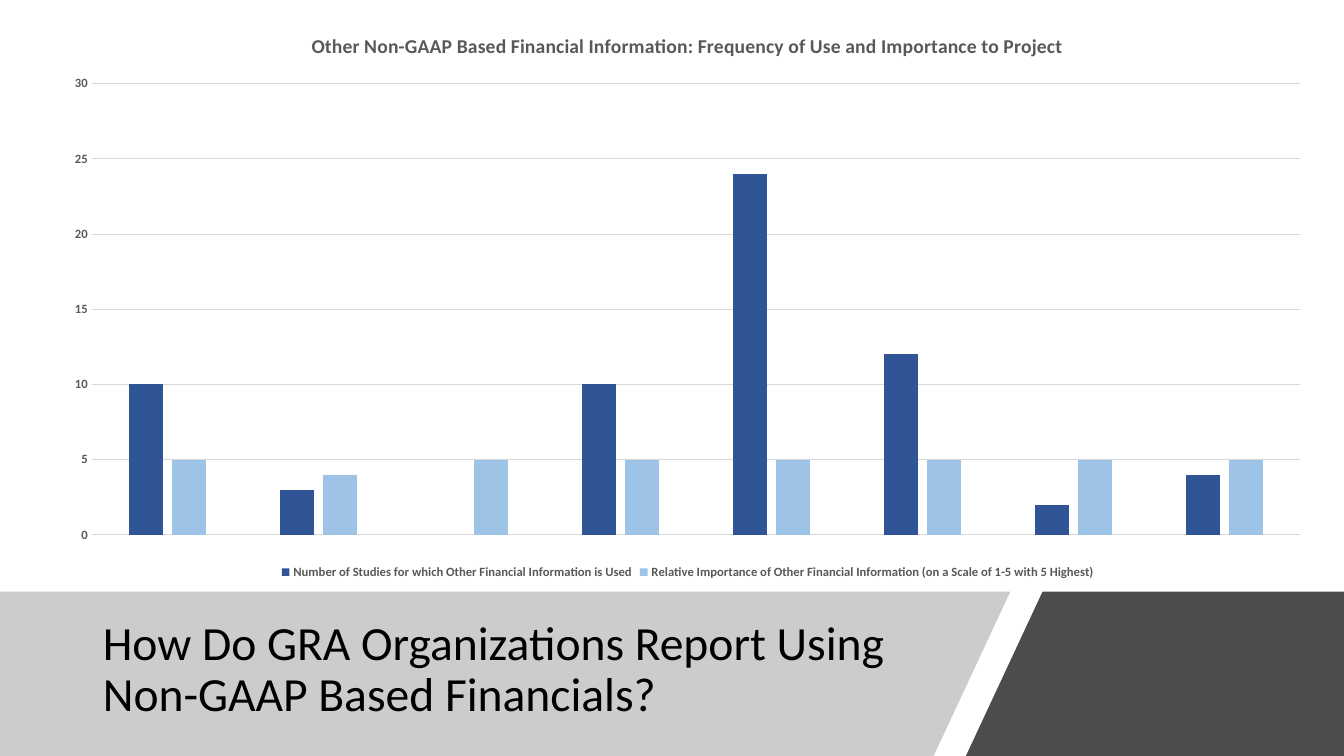
from dataclasses import dataclass

from lxml import etree
from pptx import Presentation
from pptx.chart.data import CategoryChartData
from pptx.dml.color import RGBColor
from pptx.enum.chart import XL_CHART_TYPE, XL_LEGEND_POSITION, XL_TICK_MARK
from pptx.enum.text import MSO_ANCHOR, MSO_AUTO_SIZE, PP_ALIGN
from pptx.oxml.ns import qn
from pptx.text.text import Font
from pptx.util import Inches, Pt

COLUMNS = XL_CHART_TYPE.COLUMN_CLUSTERED
LEGEND_BOTTOM = XL_LEGEND_POSITION.BOTTOM
NO_TICKS = XL_TICK_MARK.NONE
MIDDLE = MSO_ANCHOR.MIDDLE
NO_AUTOFIT = MSO_AUTO_SIZE.NONE
LEFT = PP_ALIGN.LEFT

BLACK = RGBColor(0x00, 0x00, 0x00)
GRAY = RGBColor(0x80, 0x80, 0x80)
CHART_TEXT = RGBColor(0x59, 0x59, 0x59)
GRID = RGBColor(0xD9, 0xD9, 0xD9)
DARK_BLUE = RGBColor(0x2F, 0x55, 0x97)
LIGHT_BLUE = RGBColor(0x9D, 0xC3, 0xE6)

FONT = "Calibri"
WIDTH, HEIGHT = 13.33, 7.5
BAND_TOP = 5.87


@dataclass(frozen=True)
class Band:
    corners: list[tuple[float, float]]
    color: RGBColor
    opacity: int


@dataclass(frozen=True)
class Measure:
    name: str
    values: list[int | None]
    color: RGBColor


BANDS = [
    Band([(0, BAND_TOP), (10.02, BAND_TOP), (9.26, HEIGHT), (0, HEIGHT)], GRAY, 40),
    Band([(10.34, BAND_TOP), (WIDTH, BAND_TOP), (WIDTH, HEIGHT), (9.58, HEIGHT)], BLACK, 70),
]
MEASURES = [
    Measure("Number of Studies for which Other Financial Information is Used",
            [10, 3, None, 10, 24, 12, 2, 4], DARK_BLUE),
    Measure("Relative Importance of Other Financial Information "
            "(on a Scale of 1-5 with 5 Highest)",
            [5, 4, 5, 5, 5, 5, 5, 5], LIGHT_BLUE),
]


def style_font(font: Font, size: float, color: RGBColor, bold: bool) -> None:
    font.name = FONT
    font.size = Pt(size)
    font.bold = bold
    font.color.rgb = color


def draw_band(page, band: Band) -> None:
    points = [(Inches(x), Inches(y)) for x, y in band.corners]
    builder = page.shapes.build_freeform(*points[0])
    builder.add_line_segments(points[1:], close=True)
    shape = builder.convert_to_shape()
    shape.shadow.inherit = False
    shape.line.fill.background()
    shape.fill.solid()
    shape.fill.fore_color.rgb = band.color
    color = shape.fill._xPr.find(f".//{qn('a:srgbClr')}")
    etree.SubElement(color, qn("a:alpha")).set("val", str(band.opacity * 1000))


def place_title(page, text: str) -> None:
    title = page.shapes.title
    title.left, title.top = Inches(0.92), Inches(6.05)
    title.width, title.height = Inches(8.44), Inches(1.2)
    frame = title.text_frame
    frame.text = text
    frame.word_wrap = True
    frame.auto_size = NO_AUTOFIT
    frame.vertical_anchor = MIDDLE
    para = frame.paragraphs[0]
    para.alignment = LEFT
    para.line_spacing = 0.9
    style_font(para.font, 34, BLACK, False)
    # The title lies in front of the bands
    page.shapes._spTree.append(title._element)


def add_usage_chart(page, heading: str) -> None:
    data = CategoryChartData()
    data.categories = [str(number) for number in range(1, 9)]
    for measure in MEASURES:
        data.add_series(measure.name, measure.values)
    chart = page.shapes.add_chart(
        COLUMNS, Inches(0.49), Inches(0.12), Inches(12.66), Inches(5.67), data).chart
    style_font(chart.font, 10, BLACK, False)

    chart.has_title = True
    chart.chart_title.include_in_layout = False
    chart.chart_title.text_frame.text = heading
    style_font(chart.chart_title.text_frame.paragraphs[0].font, 14, CHART_TEXT, True)

    chart.has_legend = True
    chart.legend.position = LEGEND_BOTTOM
    chart.legend.include_in_layout = False
    style_font(chart.legend.font, 9, CHART_TEXT, True)

    chart.category_axis.visible = False
    axis = chart.value_axis
    axis.minimum_scale, axis.maximum_scale, axis.major_unit = 0, 30, 5
    axis.major_tick_mark = axis.minor_tick_mark = NO_TICKS
    axis.format.line.fill.background()
    axis.major_gridlines.format.line.color.rgb = GRID
    axis.major_gridlines.format.line.width = Pt(0.75)
    style_font(axis.tick_labels.font, 9, CHART_TEXT, True)

    plot = chart.plots[0]
    plot.vary_by_categories = False
    plot.gap_width, plot.overlap = 219, -27
    for series, measure in zip(plot.series, MEASURES):
        series.format.fill.solid()
        series.format.fill.fore_color.rgb = measure.color


def main() -> None:
    deck = Presentation()
    deck.slide_width, deck.slide_height = Inches(WIDTH), Inches(HEIGHT)
    page = deck.slides.add_slide(deck.slide_layouts.get_by_name("Title Only"))
    for band in BANDS:
        draw_band(page, band)
    place_title(page, "How Do GRA Organizations Report Using Non-GAAP Based Financials?")
    add_usage_chart(page, "Other Non-GAAP Based Financial Information: "
                          "Frequency of Use and Importance to Project")
    deck.save("out.pptx")


if __name__ == "__main__":
    main()
